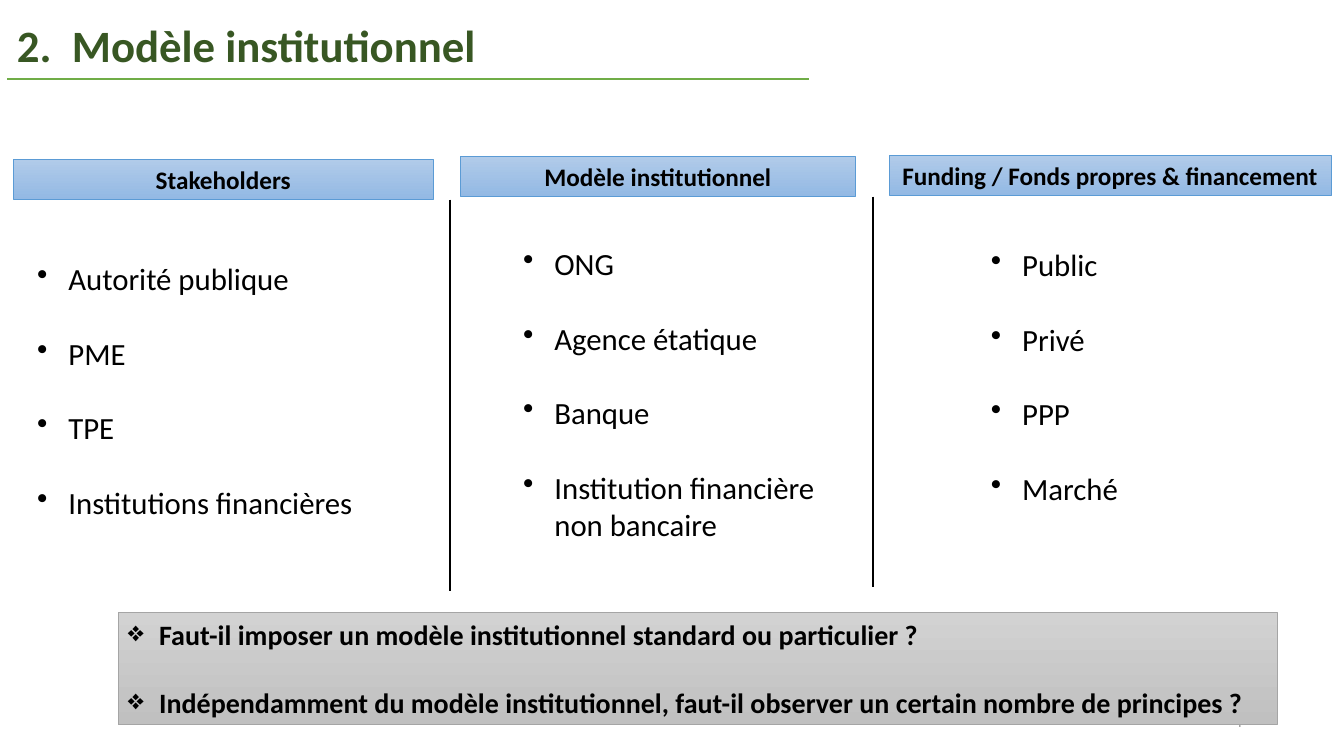
from lxml import etree
from pptx import Presentation
from pptx.dml.color import RGBColor
from pptx.enum.shapes import MSO_CONNECTOR, MSO_SHAPE
from pptx.enum.text import MSO_ANCHOR as ANCHOR, PP_ALIGN as ALIGN
from pptx.oxml.ns import qn
from pptx.util import Inches, Pt

COLORS = {
    "title": "385723", "rule": "70AD47", "text": "000000", "number": "8C8C8C",
    "blue_top": "B1CBE9", "blue_bottom": "93B9E4", "blue_line": "5B9BD5",
    "gray_top": "D2D2D2", "gray_bottom": "C0C0C0", "gray_line": "A5A5A5",
}
LINE_HEIGHT = 1.22  # line height of Calibri relative to its size

# Header text and box, then list items and box
COLUMNS = [
    ("Stakeholders", (0.13, 1.58, 4.17, 0.4),
     ["Autorité publique", "PME", "TPE", "Institutions financières"],
     (0.27, 2.53, 3.75, 2.69)),
    ("Modèle institutionnel", (4.57, 1.55, 3.91, 0.4),
     ["ONG", "Agence étatique", "Banque", "Institution financière non bancaire"],
     (5.09, 2.38, 3.12, 3.37)),
    ("Funding / Fonds propres & financement", (8.82, 1.54, 4.38, 0.4),
     ["Public", "Privé", "PPP", "Marché"],
     (9.73, 2.39, 3.12, 3)),
]
QUESTIONS = [
    "Faut-il imposer un modèle institutionnel standard ou particulier ?",
    "Indépendamment du modèle institutionnel, faut-il observer un certain nombre de principes ?",
]


def rgb(name):
    return RGBColor.from_string(COLORS[name])


def add_bullet(p, char):
    pPr = p._p.get_or_add_pPr()
    pPr.set("marL", str(Inches(0.31)))
    pPr.set("indent", str(-Inches(0.31)))
    etree.SubElement(pPr, qn("a:buChar")).set("char", char)


def write(sp, lines, size, color="text", bold=False, bullet=None,
          anchor=ANCHOR.TOP, **paragraph_format):
    tf = sp.text_frame
    tf.word_wrap = True
    tf.vertical_anchor = anchor
    for i, line in enumerate(lines):
        p = tf.add_paragraph() if i else tf.paragraphs[0]
        for name, value in paragraph_format.items():
            setattr(p, name, value)
        if i:
            p.space_before = Pt(size * LINE_HEIGHT)
        if bullet:
            add_bullet(p, bullet)
        r = p.add_run()
        r.text = line
        for name, value in {"name": "Calibri", "size": Pt(size), "bold": bold}.items():
            setattr(r.font, name, value)
        r.font.color.rgb = rgb(color)


def add_text(s, box, lines, size, **style):
    write(s.shapes.add_textbox(*map(Inches, box)), lines, size, **style)


def add_panel(s, box, hue, lines, size, **style):
    sp = s.shapes.add_shape(MSO_SHAPE.RECTANGLE, *map(Inches, box))
    sp.shadow.inherit = False
    sp.fill.gradient()
    sp.fill.gradient_angle = 270
    for stop, end in zip(sp.fill.gradient_stops, ("top", "bottom")):
        stop.color.rgb = rgb(f"{hue}_{end}")
    sp.line.color.rgb = rgb(f"{hue}_line")
    sp.line.width = Pt(0.5)
    write(sp, lines, size, bold=True, **style)


def add_line(s, x1, y1, x2, y2, color):
    line = s.shapes.add_connector(MSO_CONNECTOR.STRAIGHT, *map(Inches, (x1, y1, x2, y2)))
    line.line.color.rgb = rgb(color)
    line.line.width = Pt(1.5)
    etree.SubElement(line._element.spPr, qn("a:effectLst"))


def main():
    prs = Presentation()
    prs.slide_width, prs.slide_height = Inches(13.33), Inches(7.5)
    s = prs.slides.add_slide(prs.slide_layouts[6])

    # Title and page number
    add_text(s, (0.07, -0.25, 11.5, 1.45), ["2.  Modèle institutionnel"], 32,
             color="title", bold=True, anchor=ANCHOR.MIDDLE, line_spacing=0.9)
    add_line(s, 0.07, 0.78, 8.02, 0.78, "rule")
    add_text(s, (9.42, 6.95, 3, 0.4), ["4"], 12, color="number",
             anchor=ANCHOR.MIDDLE, alignment=ALIGN.RIGHT)

    # Three columns and the dividers between them
    for header, header_box, items, items_box in COLUMNS:
        add_panel(s, header_box, "blue", [header], 18, alignment=ALIGN.CENTER)
        add_text(s, items_box, items, 22, bullet="•")
    for x, top, bottom in ((4.46, 1.98, 5.86), (8.66, 1.95, 5.82)):
        add_line(s, x, top, x, bottom, "text")

    # Closing questions
    add_panel(s, (1.17, 6.08, 11.5, 1.11), "gray", QUESTIONS, 20,
              bullet="❖", alignment=ALIGN.JUSTIFY)

    prs.save("out.pptx")


if __name__ == "__main__":
    main()
